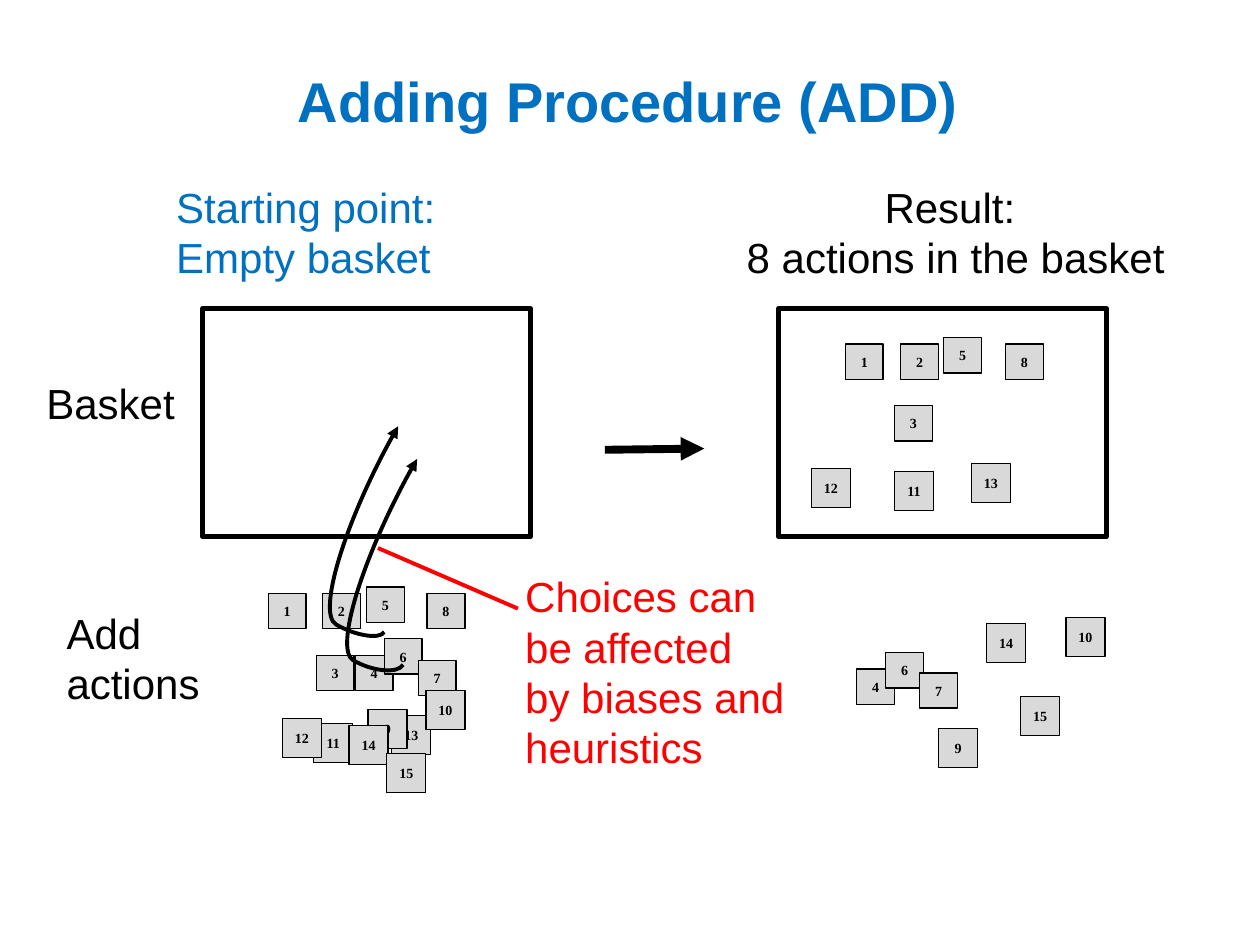
from lxml.etree import SubElement
from pptx import Presentation
from pptx.dml.color import RGBColor
from pptx.enum.shapes import MSO_CONNECTOR, MSO_SHAPE
from pptx.enum.text import MSO_ANCHOR, PP_ALIGN
from pptx.oxml.ns import qn
from pptx.util import Inches, Pt

BLUE = RGBColor(0x00, 0x70, 0xC0)
BLACK = RGBColor(0x00, 0x00, 0x00)
RED = RGBColor(0xFF, 0x00, 0x00)
GRAY = RGBColor(0xD9, 0xD9, 0xD9)

LABELS = [
    ((0.62, 0.53, 8.73, 1.18), ["Adding Procedure (ADD)"],
     dict(size=32, color=BLUE, bold=True, align=PP_ALIGN.CENTER, inset=0, wrap=True)),
    ((1.3, 1.39, 2.39, 0.91), ["Starting point:", "Empty basket"], dict(color=BLUE)),
    ((5.81, 1.39, 3.55, 0.91), ["Result: ", "8 actions in the basket"],
     dict(align=PP_ALIGN.CENTER)),
    ((0.27, 2.95, 1.23, 0.5), ["Basket"], {}),
    ((0.43, 4.77, 1.57, 0.91), ["Add actions"], dict(wrap=True)),
    ((4.07, 4.48, 2.34, 1.72), ["Choices can be affected", "by biases and heuristics"],
     dict(color=RED, wrap=True)),
]
BASKETS = [(1.61, 2.45, 2.6, 1.81), (6.18, 2.45, 2.6, 1.81)]
START_ACTIONS = [
    (13, 3.11, 5.68), (1, 2.13, 4.71), (2, 2.56, 4.71), (3, 2.51, 5.2), (4, 2.82, 5.2),
    (5, 2.91, 4.66), (6, 3.05, 5.07), (7, 3.32, 5.24), (8, 3.39, 4.71), (9, 2.92, 5.63),
    (10, 3.38, 5.48), (11, 2.49, 5.74), (12, 2.24, 5.7), (14, 2.77, 5.76), (15, 3.07, 5.98),
]
RESULT_ACTIONS = [
    (13, 7.71, 3.68), (1, 6.71, 2.73), (2, 7.15, 2.73), (3, 7.1, 3.22), (4, 6.8, 5.31),
    (5, 7.49, 2.68), (6, 7.03, 5.18), (7, 7.3, 5.34), (8, 7.98, 2.73), (9, 7.45, 5.78),
    (10, 8.46, 4.9), (11, 7.1, 3.74), (12, 6.44, 3.72), (14, 7.83, 4.95), (15, 8.1, 5.53),
]
CURVE_W, CURVE_H, CURVE_ANGLE = 1.47, 0.72, 300
CURVES = [(2.52, 4.1, -11400), (2.37, 3.84, -9500)]

prs = Presentation()
prs.slide_width, prs.slide_height = Inches(10), Inches(7.5)
s = prs.slides.add_slide(prs.slide_layouts[6])


def write(sp, lines, size=24, font="Arial", color=BLACK, bold=False,
          align=PP_ALIGN.LEFT, anchor=MSO_ANCHOR.TOP, inset=None, wrap=False):
    tf = sp.text_frame
    tf.word_wrap = wrap
    tf.vertical_anchor = anchor
    if inset is not None:
        tf.margin_left = tf.margin_right = tf.margin_top = tf.margin_bottom = Inches(inset)
    for i, line in enumerate(lines):
        p = tf.paragraphs[0] if i == 0 else tf.add_paragraph()
        p.alignment = align
        r = p.add_run()
        r.text = line
        r.font.size, r.font.name, r.font.bold = Pt(size), font, bold
        r.font.color.rgb = color


def add_box(at, line_width, fill=None):
    sp = s.shapes.add_shape(MSO_SHAPE.RECTANGLE, *map(Inches, at))
    sp.shadow.inherit = False
    if fill is None:
        sp.fill.background()
    else:
        sp.fill.solid()
        sp.fill.fore_color.rgb = fill
    sp.line.color.rgb = BLACK
    sp.line.width = Pt(line_width)
    return sp


def add_actions(actions):
    for number, x, y in actions:
        w, h = (0.3, 0.28) if number <= 8 else (0.31, 0.31)
        write(add_box((x, y, w, h), 0.75, GRAY), [str(number)], size=8,
              font="Times New Roman", bold=True, align=PP_ALIGN.CENTER,
              anchor=MSO_ANCHOR.MIDDLE)


def add_line(start, end, width, color=BLACK, arrow=False, kind=MSO_CONNECTOR.STRAIGHT):
    c = s.shapes.add_connector(kind, *map(Inches, start + end))
    c.line.color.rgb = color
    c.line.width = Pt(width)
    if arrow:
        SubElement(c.line._get_or_add_ln(), qn("a:tailEnd"), type="triangle")
    SubElement(c._element.spPr, qn("a:effectLst"))
    return c


def add_curve(x, y, bend):
    c = add_line((x, y + CURVE_H), (x + CURVE_W, y), 2.25, arrow=True,
                 kind=MSO_CONNECTOR.CURVE)
    spPr = c._element.spPr
    spPr.find(qn("a:xfrm")).set("rot", str(CURVE_ANGLE * 60000))
    guides = spPr.find(qn("a:prstGeom")).find(qn("a:avLst"))
    SubElement(guides, qn("a:gd"), name="adj1", fmla=f"val {bend}")


for at, lines, style in LABELS:
    write(s.shapes.add_textbox(*map(Inches, at)), lines, **style)
for at in BASKETS:
    add_box(at, 3)
add_line((4.8, 3.57), (5.59, 3.56), 4.5, arrow=True)
add_actions(START_ACTIONS)
for curve in CURVES:
    add_curve(*curve)
add_line((3, 4.35), (4.11, 4.83), 2.25, RED)
add_actions(RESULT_ACTIONS)

prs.save("out.pptx")
